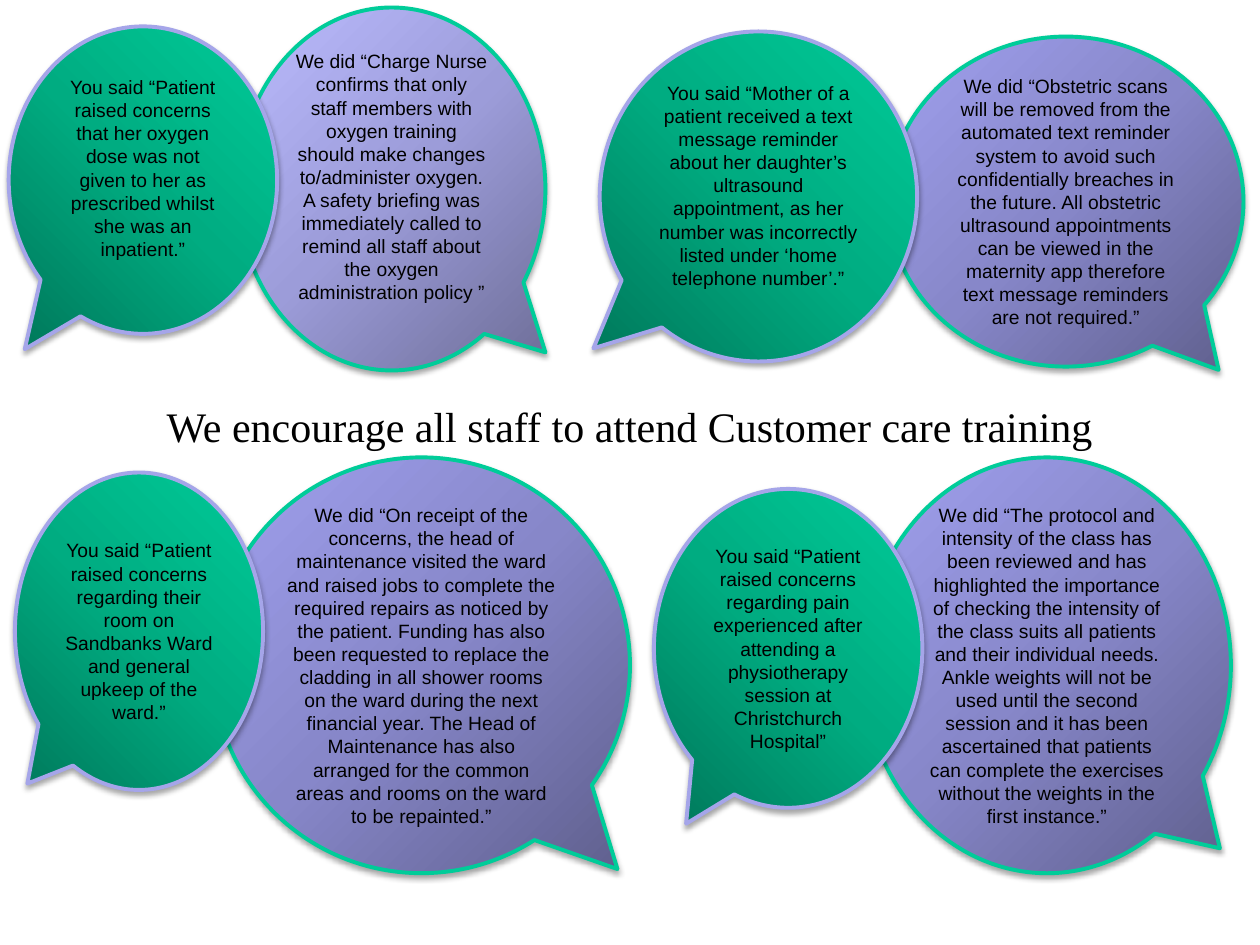
from lxml import etree
from pptx import Presentation
from pptx import util as u
from pptx.dml.color import RGBColor
from pptx.enum import shapes, text
from pptx.oxml import ns

GREEN = ("00795B", "00AC81", "00CC99")
PURPLE = ("5F5F8D", "8787C9", "A0A0EE")
LILAC = ("6E6E98", "9C9CD9", "BBBBFF")
SAID = {"line": "A5A5E9", "corner": {"l": 0, "t": 100, "r": 100, "b": 0}}
DID = {"line": "00CC99", "corner": {"l": 100, "t": 100, "r": 0, "b": 0}}


def color(value):
    """Turn a hex string into a colour."""
    return RGBColor.from_string(value)


def assign(obj, values):
    """Set attributes from a dict of format values."""
    for name, value in values.items():
        setattr(obj, name, value)


def add_xml(parent, tag, **attrs):
    """Add a DrawingML child element with the given attributes."""
    return etree.SubElement(parent, ns.qn(tag), {k: str(v) for k, v in attrs.items()})


def write(tf, words, name, size):
    """Write one centred paragraph in black."""
    p = tf.paragraphs[0]
    p.alignment = text.PP_ALIGN.CENTER
    r = p.add_run()
    r.text = words
    assign(r.font, {"name": name, "size": u.Pt(size)})
    r.font.color.rgb = color("000000")


def shade(sp, stops, corner):
    """Fill a shape with a circular gradient that starts in one corner."""
    grad = etree.Element(ns.qn("a:gradFill"), rotWithShape="1")
    stop_list = add_xml(grad, "a:gsLst")
    for position, value in zip((0, 50, 100), stops):
        stop = add_xml(stop_list, "a:gs", pos=position * 1000)
        add_xml(stop, "a:srgbClr", val=value)
    path = add_xml(grad, "a:path", path="circle")
    add_xml(path, "a:fillToRect", **{k: v * 1000 for k, v in corner.items()})
    sp._element.spPr.find(ns.qn("a:prstGeom")).addnext(grad)


def drop_shadow(sp):
    """Give a shape a soft shadow straight below it."""
    sp.shadow.inherit = False
    effects = sp._element.spPr.find(ns.qn("a:effectLst"))
    shadow = add_xml(effects, "a:outerShdw", blurRad=u.Pt(3.1), dist=u.Pt(1.8),
                     dir=90 * 60000, rotWithShape=0)
    shadow_color = add_xml(shadow, "a:srgbClr", val="000000")
    add_xml(shadow_color, "a:alpha", val=35000)


def bubble(s, box, style, stops, tail, words, lift=0):
    """Draw one speech bubble; lift is extra room below its text."""
    sp = s.shapes.add_shape(shapes.MSO_SHAPE.OVAL_CALLOUT, *map(u.Pt, box))
    sp.adjustments[0], sp.adjustments[1] = tail
    shade(sp, stops, style["corner"])
    sp.line.color.rgb = color(style["line"])
    sp.line.width = u.Pt(2.25)
    drop_shadow(sp)
    tf = sp.text_frame
    assign(tf, {"word_wrap": True, "vertical_anchor": text.MSO_ANCHOR.MIDDLE,
                "margin_left": u.Pt(7.2), "margin_right": u.Pt(7.2),
                "margin_top": u.Pt(3.6), "margin_bottom": u.Pt(3.6 + lift)})
    write(tf, words, "Arial", 11)


def feedback(s, origin, said, did):
    """Draw an answer and, in front of it, the comment, from the pair's top left."""
    for part, style in ((did, DID), (said, SAID)):
        x, y, w, h = part["box"]
        details = {k: v for k, v in part.items() if k != "box"}
        bubble(s, (origin[0] + x, origin[1] + y, w, h), style, **details)


def heading(s, box, words):
    """Place the slide title in its box."""
    sp = s.shapes.title
    assign(sp, dict(zip(("left", "top", "width", "height"), map(u.Pt, box))))
    tf = sp.text_frame
    assign(tf, {"word_wrap": True, "auto_size": text.MSO_AUTO_SIZE.NONE,
                "vertical_anchor": text.MSO_ANCHOR.MIDDLE})
    write(tf, words, "Times New Roman", 24)


PAIRS = [
    ((8.6, 261.4),
     {"box": (0, 8.6, 141.8, 181.4), "stops": GREEN, "tail": (-0.45, 0.48),
      "words": "You said “Patient raised concerns regarding their room on Sandbanks "
               "Ward and general upkeep of the ward.”"},
     {"box": (113.1, 0, 238.3, 237.6), "stops": PURPLE, "tail": (0.47, 0.49),
      "words": "We did “On receipt of the concerns, the head of maintenance visited the "
               "ward and raised jobs to complete the required repairs as noticed by the "
               "patient. Funding has also been requested to replace the cladding in all "
               "shower rooms on the ward during the next financial year. The Head of "
               "Maintenance has also arranged for the common areas and rooms on the ward "
               "to be repainted.”"}),
    ((373.7, 261.4),
     {"box": (0, 18, 153.4, 182.2), "stops": GREEN, "tail": (-0.38, 0.55),
      "words": "You said “Patient raised concerns regarding pain experienced after "
               "attending a physiotherapy session at Christchurch Hospital”"},
     {"box": (119.5, 0, 210.2, 237.6), "stops": PURPLE, "tail": (0.47, 0.44),
      "words": "We did “The protocol and intensity of the class has been reviewed and has "
               "highlighted the importance of checking the intensity of the class suits "
               "all patients and their individual needs. Ankle weights will not be used "
               "until the second session and it has been ascertained that patients can "
               "complete the exercises without the weights in the first instance.”"}),
    ((342.7, 18),
     {"box": (0, 0, 181.4, 188.6), "stops": GREEN, "tail": (-0.52, 0.46), "lift": 13,
      "words": "You said “Mother of a patient received a text message reminder about her "
               "daughter’s ultrasound appointment, as her number was incorrectly listed "
               "under ‘home telephone number’.”"},
     {"box": (164.9, 2.9, 203, 188.6), "stops": PURPLE, "tail": (0.43, 0.51),
      "words": "We did “Obstetric scans will be removed from the automated text reminder "
               "system to avoid such confidentially breaches in the future. All obstetric "
               "ultrasound appointments can be viewed in the maternity app therefore text "
               "message reminders are not required.”"}),
    ((5, 4.3),
     {"box": (0, 10.8, 153.4, 175.7), "stops": GREEN, "tail": (-0.44, 0.55), "lift": 14,
      "words": "You said “Patient raised concerns that her oxygen dose was not given to "
               "her as prescribed whilst she was an inpatient.”"},
     {"box": (131, 0, 175.7, 207.4), "stops": LILAC, "tail": (0.5, 0.45), "lift": 14,
      "words": "We did “Charge Nurse confirms that only staff members with oxygen training "
               "should make changes to/administer oxygen. A safety briefing was "
               "immediately called to remind all staff about the oxygen administration "
               "policy ”"}),
]


def main():
    """Build the slide and save it."""
    prs = Presentation()
    assign(prs, {"slide_width": u.Pt(720), "slide_height": u.Pt(540)})
    s = prs.slides.add_slide(prs.slide_layouts[5])
    heading(s, (54, 225, 612, 36), "We encourage all staff to attend Customer care training")
    for origin, said, did in PAIRS:
        feedback(s, origin, said, did)
    prs.save("out.pptx")


if __name__ == "__main__":
    main()
